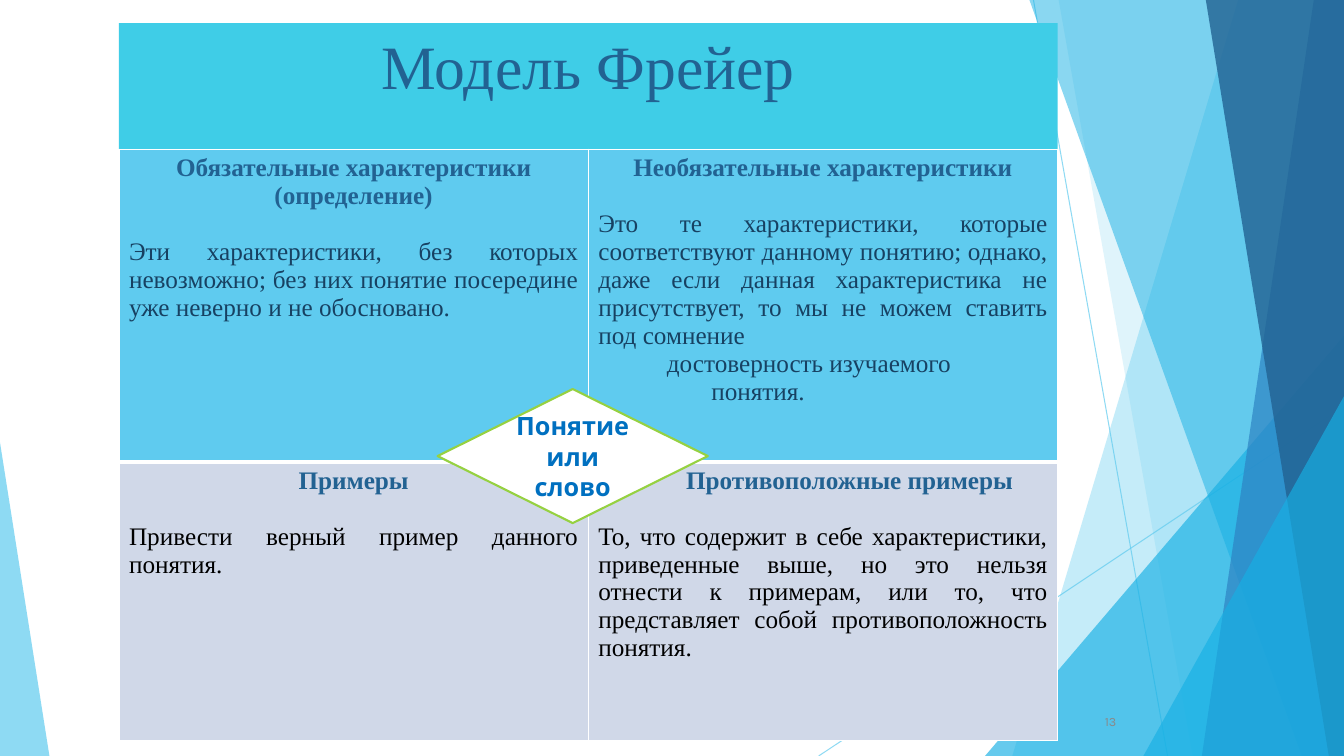
from lxml import etree
from pptx import Presentation
from pptx.dml.color import RGBColor
from pptx.enum.shapes import MSO_CONNECTOR, MSO_SHAPE
from pptx.enum.text import MSO_ANCHOR, PP_ALIGN
from pptx.oxml.ns import qn
from pptx.util import Inches, Pt

LEFT, CENTER = PP_ALIGN.LEFT, PP_ALIGN.CENTER
RIGHT, JUSTIFY = PP_ALIGN.RIGHT, PP_ALIGN.JUSTIFY
TOP, MIDDLE = MSO_ANCHOR.TOP, MSO_ANCHOR.MIDDLE
RECTANGLE, TRIANGLE = MSO_SHAPE.RECTANGLE, MSO_SHAPE.ISOSCELES_TRIANGLE
DIAMOND = MSO_SHAPE.FLOWCHART_DECISION
STRAIGHT = MSO_CONNECTOR.STRAIGHT

COLORS = {
    "sky": "5FCBEF", "azure": "17B0E4", "blue": "2E83C3", "navy": "226292",
    "turquoise": "3FCDE7", "ink": "174162", "pale": "D0D8E8", "green": "96D141",
    "accent": "0070C0", "gray": "898989", "white": "FFFFFF", "black": "000000",
}
SERIF, SANS = "Times New Roman", "Karla"
BOTTOM_EDGE, RIGHT_EDGE = 7.5, 13.33

RAYS = [((10.25, 0), (11.58, 7.5)), ((13.33, 4.03), (8.12, 7.5))]
BACK_BANDS = [(12.28, 10.04, "sky", 36), (10.5, 11.83, "sky", 20)]
FRONT_BANDS = [
    (10.21, 12.91, "azure", 50),
    (13.03, 11.92, "blue", 70),
    (11.96, 13.18, "navy", 80),
]

HEADING = {"bold": True, "color": "navy", "align": CENTER}
BODY = {"align": JUSTIFY, "before": 20}
FRAYER_CELLS = [
    [
        [
            ("Обязательные характеристики (определение)", HEADING),
            ("Эти характеристики, без которых невозможно; без них понятие "
             "посередине уже неверно и не обосновано.", {**BODY, "color": "ink"}),
        ],
        [
            ("Необязательные характеристики", HEADING),
            ("Это те характеристики, которые соответствуют данному понятию; однако, "
             "даже если данная характеристика не присутствует, то мы не можем "
             "ставить под сомнение", {**BODY, "color": "ink"}),
            ("достоверность изучаемого", {"color": "ink", "indent": 0.68}),
            ("понятия.", {"color": "ink", "indent": 1.12}),
        ],
    ],
    [
        [
            ("Примеры", HEADING),
            ("Привести верный пример данного понятия.", BODY),
        ],
        [
            ("Противоположные примеры", {**HEADING, "align": LEFT, "indent": 0.87}),
            ("То, что содержит в себе характеристики, приведенные выше, но это "
             "нельзя отнести к примерам, или то, что представляет собой "
             "противоположность понятия.", BODY),
        ],
    ],
]


def rgb(name):
    """Return the named colour."""
    return RGBColor.from_string(COLORS[name])


def set_opacity(shape, percent):
    """Make the only colour of a shape partly transparent."""
    for color in shape._element.spPr.iter(qn("a:srgbClr")):
        etree.SubElement(color, qn("a:alpha")).set("val", str(percent * 1000))


def write_paragraph(paragraph, text, *, size=18, font=SERIF, color="black",
                    bold=False, align=LEFT, before=0, indent=0):
    """Fill one paragraph with formatted text."""
    paragraph.alignment = align
    if before:
        paragraph.space_before = Pt(before)
    if indent:
        paragraph._p.get_or_add_pPr().set("marL", str(Inches(indent)))
    run = paragraph.add_run()
    run.text = text
    run.font.size, run.font.name, run.font.bold = Pt(size), font, bold
    run.font.color.rgb = rgb(color)


def style_shape(shape, fill, line=None, opacity=100):
    """Give a shape a flat fill and an optional outline."""
    shape.shadow.inherit = False
    shape.fill.solid()
    shape.fill.fore_color.rgb = rgb(fill)
    if opacity < 100:
        set_opacity(shape, opacity)
    if line:
        shape.line.color.rgb = rgb(line)
        shape.line.width = Pt(1.5)
    else:
        shape.line.fill.background()


def add_box(slide, kind, bounds, fill, line=None, opacity=100):
    """Add a preset shape."""
    shape = slide.shapes.add_shape(kind, *map(Inches, bounds))
    style_shape(shape, fill, line, opacity)
    return shape


def add_label(shape, text, anchor, **text_format):
    """Write a single paragraph inside a shape."""
    shape.text_frame.word_wrap = True
    shape.text_frame.vertical_anchor = anchor
    write_paragraph(shape.text_frame.paragraphs[0], text, **text_format)


def add_ray(slide, start, end):
    """Add a thin decorative line."""
    ray = slide.shapes.add_connector(STRAIGHT, *map(Inches, start + end))
    ray.line.color.rgb = rgb("sky")
    ray.line.width = Pt(0.75)
    set_opacity(ray, 70)
    etree.SubElement(ray._element.spPr, qn("a:effectLst"))


def add_band(slide, top_x, bottom_x, fill, opacity):
    """Add a slanted band that reaches the right edge of the slide."""
    corners = [(RIGHT_EDGE, 0), (RIGHT_EDGE, BOTTOM_EDGE), (bottom_x, BOTTOM_EDGE)]
    builder = slide.shapes.build_freeform(Inches(top_x), 0)
    builder.add_line_segments([(Inches(x), Inches(y)) for x, y in corners])
    style_shape(builder.convert_to_shape(), fill, opacity=opacity)


def add_corner(slide, bounds, fill, opacity, apex):
    """Add a right-angled triangle with its apex at one side."""
    corner = add_box(slide, TRIANGLE, bounds, fill, opacity=opacity)
    corner.adjustments[0] = apex


def set_borders(cell, widths):
    """Draw white borders on the left, right, top and bottom of a cell."""
    properties = cell._tc.get_or_add_tcPr()
    for index, (side, width) in enumerate(zip("LRTB", widths)):
        border = etree.Element(qn(f"a:ln{side}"), w=str(Pt(width)))
        fill = etree.SubElement(border, qn("a:solidFill"))
        etree.SubElement(fill, qn("a:srgbClr"), val=COLORS["white"])
        properties.insert(index, border)


def add_frayer_table(slide):
    """Add the four-part Frayer table."""
    bounds = map(Inches, (1.18, 1.48, 9.31, 5.87))
    table = slide.shapes.add_table(2, 2, *bounds).table
    table.first_row = table.horz_banding = False
    for column in table.columns:
        column.width = Inches(4.655)
    rows = zip(table.rows, (3.1, 2.77), ("sky", "pale"),
               ((1, 1, 1, 3), (1, 1, 3, 1)), FRAYER_CELLS)
    for row, height, fill, borders, contents in rows:
        row.height = Inches(height)
        for cell, paragraphs in zip(row.cells, contents):
            cell.fill.solid()
            cell.fill.fore_color.rgb = rgb(fill)
            set_borders(cell, borders)
            frame = cell.text_frame
            for index, (text, text_format) in enumerate(paragraphs):
                paragraph = frame.add_paragraph() if index else frame.paragraphs[0]
                write_paragraph(paragraph, text, **text_format)


def add_backdrop(slide):
    """Add the rays, bands and corners behind the content."""
    for start, end in RAYS:
        add_ray(slide, start, end)
    for band in BACK_BANDS:
        add_band(slide, *band)
    add_corner(slide, (9.77, 3.33, 3.56, 4.17), "azure", 66, 1)
    for band in FRONT_BANDS:
        add_band(slide, *band)
    add_corner(slide, (11.34, 3.93, 1.99, 3.57), "azure", 66, 1)
    add_corner(slide, (0, 4.39, 0.49, 3.11), "sky", 70, 0)


def main():
    """Build and save the slide."""
    presentation = Presentation()
    presentation.slide_width = Inches(RIGHT_EDGE)
    presentation.slide_height = Inches(BOTTOM_EDGE)
    slide = presentation.slides.add_slide(presentation.slide_layouts[6])
    add_backdrop(slide)
    title = add_box(slide, RECTANGLE, (1.18, 0.23, 9.31, 1.25), "turquoise")
    add_label(title, "Модель Фрейер", TOP, size=44, color="navy", align=CENTER)
    add_frayer_table(slide)
    concept = add_box(slide, DIAMOND, (4.34, 3.86, 2.68, 1.33), "white", "green")
    add_label(concept, "Понятие или слово", MIDDLE, font=SANS, color="accent",
              bold=True, align=CENTER)
    number = slide.shapes.add_textbox(*map(Inches, (10.49, 6.97, 0.68, 0.37)))
    add_label(number, "13", MIDDLE, size=9, font=SANS, color="gray", align=RIGHT)
    presentation.save("out.pptx")


if __name__ == "__main__":
    main()
